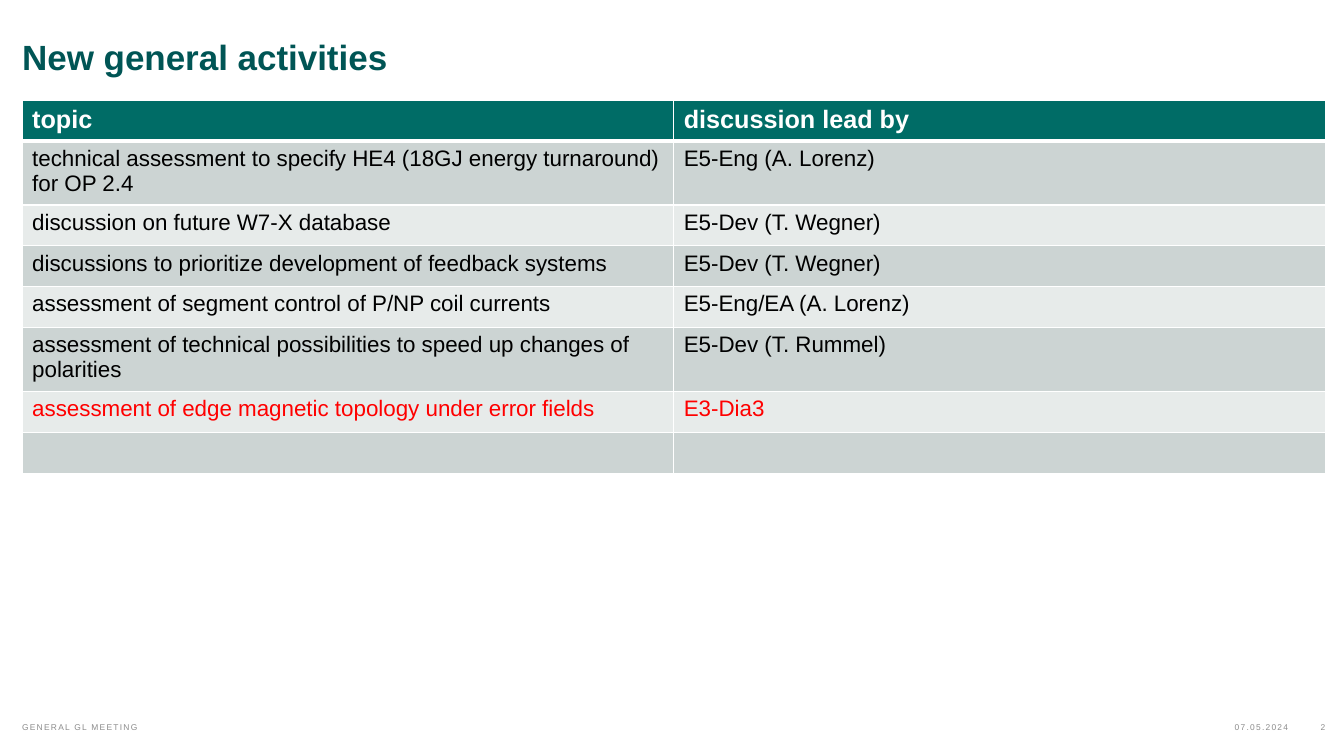
from lxml.etree import SubElement
from pptx import Presentation
from pptx.dml.color import RGBColor
from pptx.enum.text import MSO_ANCHOR, PP_ALIGN
from pptx.oxml.ns import qn
from pptx.util import Pt

TITLE_GREEN = RGBColor(0x00, 0x55, 0x55)
HEADER_GREEN = RGBColor(0x00, 0x6C, 0x66)
BAND_DARK = RGBColor(0xCC, 0xD4, 0xD3)
BAND_LIGHT = RGBColor(0xE7, 0xEB, 0xEA)
FOOTER_GREY = RGBColor(0x8C, 0x8C, 0x8C)
WHITE = RGBColor(0xFF, 0xFF, 0xFF)
BLACK = RGBColor(0x00, 0x00, 0x00)
RED = RGBColor(0xFF, 0x00, 0x00)

HEADINGS = ("topic", "discussion lead by")
ACTIVITIES = [
    ("technical assessment to specify HE4 (18GJ energy turnaround) for OP 2.4", "E5-Eng (A. Lorenz)", BLACK),
    ("discussion on future W7-X database", "E5-Dev (T. Wegner)", BLACK),
    ("discussions to prioritize development of feedback systems", "E5-Dev (T. Wegner)", BLACK),
    ("assessment of segment control of P/NP coil currents", "E5-Eng/EA (A. Lorenz)", BLACK),
    ("assessment of technical possibilities to speed up changes of polarities", "E5-Dev (T. Rummel)", BLACK),
    ("assessment of edge magnetic topology under error fields", "E3-Dia3", RED),
    ("", "", BLACK),
]
FOOTERS = [
    ("07.05.2024", 324.7, 595.4, PP_ALIGN.RIGHT),
    ("GENERAL GL MEETING", 15.8, 518.4, PP_ALIGN.LEFT),
    ("2", 920.1, 26.6, PP_ALIGN.RIGHT),
]


class SlideBuilder:
    """Holds the text style and the slide being filled."""

    font_name = "Arial"
    left = 15.8
    width = 931

    def __init__(self, slide):
        self.slide = slide

    def add_span(self, para, text, size, color, bold=False):
        span = para.add_run()
        span.text = text
        span.font.color.rgb = color
        style = {"name": self.font_name, "size": Pt(size), "bold": bold}
        for name, value in style.items():
            setattr(span.font, name, value)
        return span

    def frame(self, box, anchor):
        values = {"margin_left": 0, "margin_top": 0, "margin_right": 0,
                  "margin_bottom": 0, "word_wrap": True, "vertical_anchor": anchor}
        for name, value in values.items():
            setattr(box.text_frame, name, value)
        return box.text_frame.paragraphs[0]

    def title(self, text):
        box = self.slide.shapes.title
        place = {"left": self.left, "top": 27.4, "width": 792.7, "height": 30.2}
        for name, value in place.items():
            setattr(box, name, Pt(value))
        para = self.frame(box, MSO_ANCHOR.TOP)
        layout = {"alignment": PP_ALIGN.LEFT, "line_spacing": Pt(28), "space_after": Pt(18)}
        for name, value in layout.items():
            setattr(para, name, value)
        self.add_span(para, text, 25, TITLE_GREEN, bold=True)

    def footer(self, text, left, width, alignment):
        box = self.slide.shapes.add_textbox(Pt(left), Pt(511.2), Pt(width), Pt(11.5))
        para = self.frame(box, MSO_ANCHOR.BOTTOM)
        para.alignment = alignment
        span = self.add_span(para, text, 6, FOOTER_GREY)
        span._r.get_or_add_rPr().set("spc", "90")

    def borders(self, cell, top, bottom):
        properties = cell._tc.get_or_add_tcPr()
        for side, width in {"L": 1, "R": 1, "T": top, "B": bottom}.items():
            line = SubElement(properties, qn(f"a:ln{side}"), w=str(Pt(width)))
            fill = SubElement(line, qn("a:solidFill"))
            SubElement(fill, qn("a:srgbClr"), val=str(WHITE))

    def cell(self, cell, text, size, color, fill, bold=False, top=1, bottom=1):
        self.borders(cell, top, bottom)
        cell.fill.solid()
        cell.fill.fore_color.rgb = fill
        para = cell.text_frame.paragraphs[0]
        if text:
            self.add_span(para, text, size, color, bold)
        else:
            para.font.size = Pt(size)

    def table(self, headings, activities):
        header_height, row_height = 13.7, 29.2
        height = header_height + row_height * len(activities)
        table = self.slide.shapes.add_table(
            len(activities) + 1, len(headings),
            Pt(self.left), Pt(72), Pt(self.width), Pt(height)).table
        for column in table.columns:
            column.width = Pt(self.width / len(headings))
        for index, row in enumerate(table.rows):
            row.height = Pt(row_height if index else header_height)

        # Header row
        for column, heading in enumerate(headings):
            self.cell(table.cell(0, column), heading, 18, WHITE, HEADER_GREEN, bold=True, bottom=3)

        # Banded activity rows
        for row, (topic, lead, color) in enumerate(activities, start=1):
            fill = BAND_DARK if row % 2 else BAND_LIGHT
            for column, text in enumerate((topic, lead)):
                self.cell(table.cell(row, column), text, 16, color, fill, top=3 if row == 1 else 1)


def main():
    deck = Presentation()
    deck.slide_width, deck.slide_height = Pt(960), Pt(540)
    page = SlideBuilder(deck.slides.add_slide(deck.slide_layouts[5]))

    # Title
    page.title("New general activities")

    # Footer line
    for footer in FOOTERS:
        page.footer(*footer)

    # Activities table
    page.table(HEADINGS, ACTIVITIES)

    deck.save("out.pptx")


if __name__ == "__main__":
    main()
